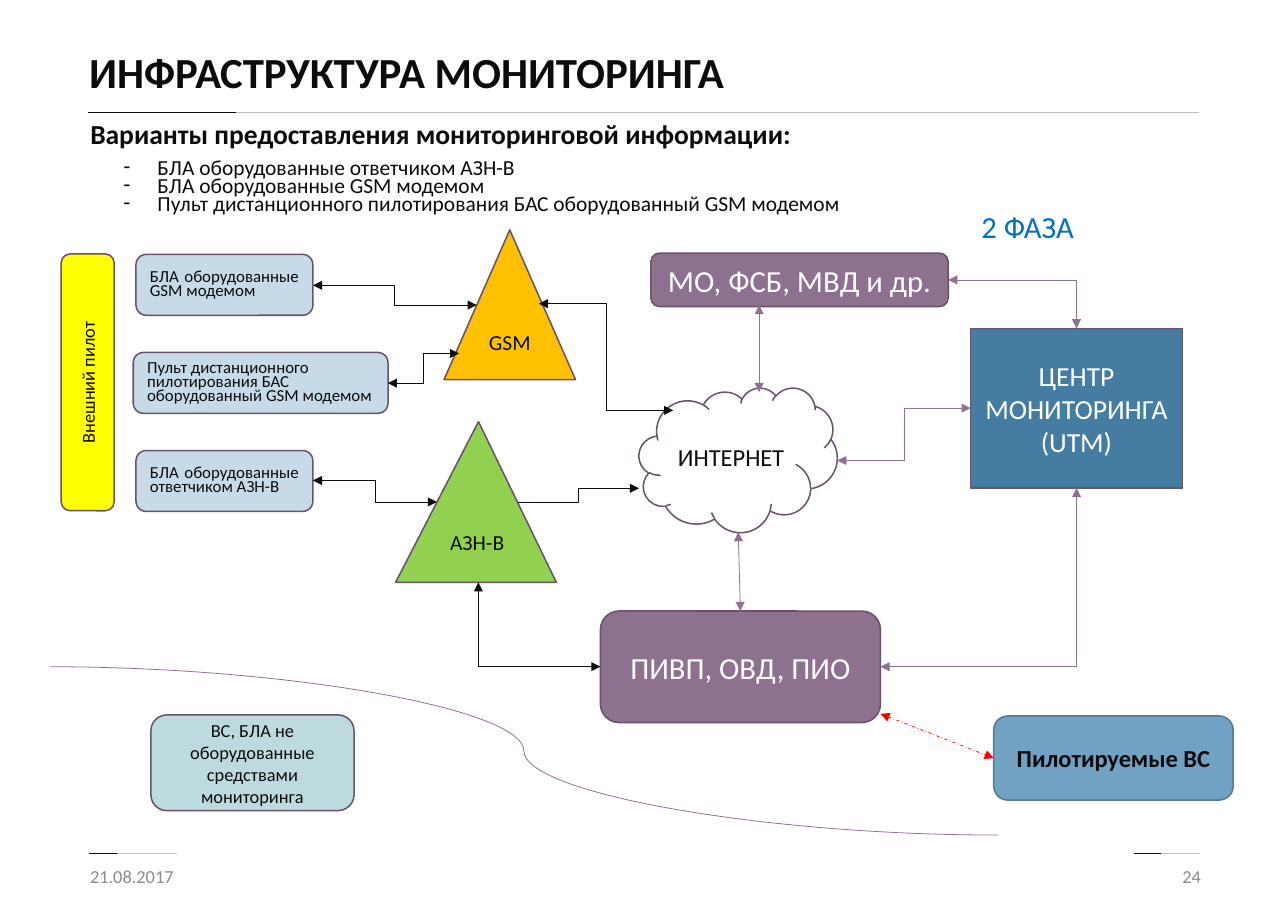
from lxml import etree
from pptx import Presentation
from pptx import util as u
from pptx.dml import color
from pptx.enum import dml, shapes, text
from pptx.oxml import ns

COLORS = {
    "ink": "0C0C0C", "white": "FFFFFF", "grey": "8C8C8C", "rule": "BFBFBF",
    "outline": "69536A", "plum": "8E708F", "pale": "C6DAE7", "mint": "BDDADF",
    "amber": "FFC000", "green": "92D050", "center": "457DA2", "yellow": "FFFF00",
    "sky": "71A2C3", "sky_line": "547890", "phase": "0070C0", "red": "FF0000",
}
LEFT, CENTER, RIGHT, JUSTIFY = (
    text.PP_ALIGN.LEFT, text.PP_ALIGN.CENTER, text.PP_ALIGN.RIGHT, text.PP_ALIGN.JUSTIFY)
MIDDLE, TOP = text.MSO_ANCHOR.MIDDLE, text.MSO_ANCHOR.TOP
ROUND, TRIANGLE = shapes.MSO_SHAPE.ROUNDED_RECTANGLE, shapes.MSO_SHAPE.ISOSCELES_TRIANGLE
STRAIGHT, ELBOW, CURVE = (
    shapes.MSO_CONNECTOR.STRAIGHT, shapes.MSO_CONNECTOR.ELBOW, shapes.MSO_CONNECTOR.CURVE)


def rgb(name):
    return color.RGBColor.from_string(COLORS[name])


def write(paragraph, words, size=12, ink="ink", bold=False, align=LEFT,
          spacing=1.0, after=0, bullet=None):
    """Fill one paragraph; a bullet of "" switches the template's bullet off."""
    paragraph.alignment = align
    paragraph.line_spacing = spacing
    paragraph.space_before = u.Pt(0)
    paragraph.space_after = u.Pt(after)
    if bullet is not None:
        props = paragraph._p.get_or_add_pPr()
        props.set("marL", str(u.Pt(43.9) if bullet else 0))
        props.set("indent", str(u.Pt(-22.3) if bullet else 0))
        if bullet:
            etree.SubElement(props, ns.qn("a:buChar")).set("char", bullet)
        else:
            etree.SubElement(props, ns.qn("a:buNone"))
    run = paragraph.add_run()
    run.text = words
    run.font.name = "Calibri"
    run.font.size = u.Pt(size)
    run.font.bold = bold
    run.font.color.rgb = rgb(ink)


class Diagram:
    def __init__(self, slide):
        self.slide = slide

    def frame(self, shape, anchor):
        shape.text_frame.word_wrap = True
        shape.text_frame.auto_size = text.MSO_AUTO_SIZE.NONE
        shape.text_frame.vertical_anchor = anchor
        return shape.text_frame

    def placeholder(self, index, area, anchor):
        holder = self.slide.placeholders[index]
        holder.left, holder.top, holder.width, holder.height = map(u.Pt, area)
        return self.frame(holder, anchor)

    def label(self, words, area, anchor=MIDDLE, **style):
        box = self.slide.shapes.add_textbox(*map(u.Pt, area))
        write(self.frame(box, anchor).paragraphs[0], words, **style)

    def node(self, words, area, fill, kind=ROUND, outline="outline", **style):
        shape = self.slide.shapes.add_shape(kind, *map(u.Pt, area))
        shape.shadow.inherit = False
        shape.fill.solid()
        shape.fill.fore_color.rgb = rgb(fill)
        shape.line.color.rgb = rgb(outline)
        shape.line.width = u.Pt(1)
        frame = self.frame(shape, MIDDLE)
        style = {"align": CENTER, **style}
        for i, line in enumerate(words.split("\n")):
            write(frame.add_paragraph() if i else frame.paragraphs[0], line, **style)
        return shape

    def link(self, start, end, ink="ink", kind=STRAIGHT, ends=("head", "tail"),
             corner=False, dash=None):
        """Draw a connector; corner makes an elbow that turns once, horizontal part first."""
        line = self.slide.shapes.add_connector(kind, *map(u.Pt, start + end))
        line.line.color.rgb = rgb(ink)
        line.line.width = u.Pt(0.5)
        if dash:
            line.line.dash_style = dash
        props = line._element.spPr
        if corner:
            props.find(ns.qn("a:prstGeom")).set("prst", "bentConnector2")
        stroke = props.find(ns.qn("a:ln"))
        for side in ends:
            etree.SubElement(stroke, ns.qn(f"a:{side}End")).set("type", "triangle")
        etree.SubElement(props, ns.qn("a:effectLst"))
        return line

    def rule(self, left, top, width, accent):
        for length, ink in ((width, "rule"), (accent, "ink")):
            self.link((left, top), (left + length, top), ink, ends=())


def add_texts(diagram):
    diagram.rule(57.8, 73.4, 725.8, 96.4)
    diagram.rule(741, 558, 43.2, 18)
    diagram.rule(58.3, 558, 57.6, 18)

    title = diagram.placeholder(0, (51.1, 20.2, 573.8, 57.6), MIDDLE)
    write(title.paragraphs[0], "ИНФРАСТРУКТУРА МОНИТОРИНГА", size=28, bold=True, spacing=0.9)

    body = diagram.placeholder(1, (51.8, 78.5, 767.5, 478), TOP)
    write(body.paragraphs[0], "Варианты предоставления мониторинговой информации:",
          size=18, bold=True, spacing=0.7, after=8, bullet="")
    for option in ("БЛА оборудованные ответчиком АЗН-В",
                   "БЛА оборудованные GSM модемом",
                   "Пульт дистанционного пилотирования БАС оборудованный GSM модемом"):
        item = body.add_paragraph()
        item.level = 1
        write(item, option, size=14, align=JUSTIFY, spacing=0.7, bullet="-")

    diagram.label("21.08.2017", (51.8, 556.6, 189.4, 31.7), ink="grey")
    diagram.label("24", (602.6, 556.6, 189.4, 31.7), ink="grey", align=RIGHT)
    diagram.label("2 ФАЗА", (634.3, 132.5, 81.4, 31.7), TOP, size=20, ink="phase")


def add_diagram(diagram):
    sources = (("БЛА оборудованные GSM модемом", 88.9, 115.6, JUSTIFY),
               ("Пульт дистанционного пилотирования БАС оборудованный GSM модемом",
                87.1, 166.5, LEFT),
               ("БЛА оборудованные ответчиком АЗН-В", 88.9, 115.6, JUSTIFY))
    for row, (words, left, width, align) in enumerate(sources):
        diagram.node(words, (left, 166.3 + 64.1 * row, width, 39.8), "pale",
                     size=11, align=align, spacing=0.7)

    pilot = diagram.node("Внешний пилот", (-26.6, 232.6, 167.8, 34.6), "yellow")
    pilot.rotation = 270
    diagram.node("ВС, БЛА не оборудованные средствами мониторинга",
                 (98.6, 467.3, 132.8, 62.6), "mint")
    diagram.node("GSM", (290.2, 150.3, 85.9, 97.8), "amber", TRIANGLE, size=14)
    azn = diagram.node("АЗН-В", (258.5, 275.6, 105.1, 105.1), "green", TRIANGLE, size=14)
    azn.adjustments[0] = 0.516
    diagram.node("ИНТЕРНЕТ", (417.6, 253.4, 129.6, 94.5), "white",
                 shapes.MSO_SHAPE.CLOUD, size=16)
    diagram.node("ЦЕНТР МОНИТОРИНГА\n(UTM)", (634.3, 214.6, 138.4, 104.4), "center",
                 shapes.MSO_SHAPE.RECTANGLE, size=18, ink="white")
    services = diagram.node("ПИВП, ОВД, ПИО", (392.4, 399.4, 183, 72.9), "plum",
                            size=20, ink="white")
    diagram.node("МО, ФСБ, МВД и др.", (425.3, 165.4, 194.4, 35.1), "plum",
                 size=20, ink="white")
    manned = diagram.node("Пилотируемые ВС", (649.4, 468, 156.5, 55), "sky",
                          outline="sky_line", size=16, bold=True)

    for start, end, ink in (((204.5, 186.5), (311.5, 199.4), "ink"),
                            ((253.5, 250.5), (300.1, 231.1), "ink"),
                            ((204.5, 314.1), (285.6, 328.1), "ink"),
                            ((352.1, 198.5), (439.9, 268.2), "ink"),
                            ((547.2, 301), (634.3, 266.8), "plum")):
        diagram.link(start, end, ink, ELBOW)
    diagram.link((338.2, 328.1), (417.6, 319.2), kind=ELBOW, ends=("tail",))

    for start, end, ink in (((392.4, 435.8), (312.7, 380.7), "ink"),
                            ((575.4, 435.8), (703.5, 319), "plum"),
                            ((619.7, 183), (703.5, 214.6), "plum")):
        diagram.link(start, end, ink, ELBOW, corner=True)

    diagram.link((32.4, 435.8), (652.3, 545.8), "plum", CURVE, ends=())
    diagram.link((496.1, 256.3), (496.1, 199.4), "plum")
    diagram.link((483.9, 399.4), (482.4, 347.8), "plum").begin_connect(services, 0)
    voice = diagram.link((575.4, 466.6), (649.4, 495.5), "red", dash=dml.MSO_LINE.DASH_DOT)
    voice.end_connect(manned, 1)


def main():
    deck = Presentation()
    deck.slide_width, deck.slide_height = u.Pt(841.68), u.Pt(595.44)
    diagram = Diagram(deck.slides.add_slide(deck.slide_layouts[1]))
    add_texts(diagram)
    add_diagram(diagram)
    deck.save("out.pptx")


if __name__ == "__main__":
    main()
